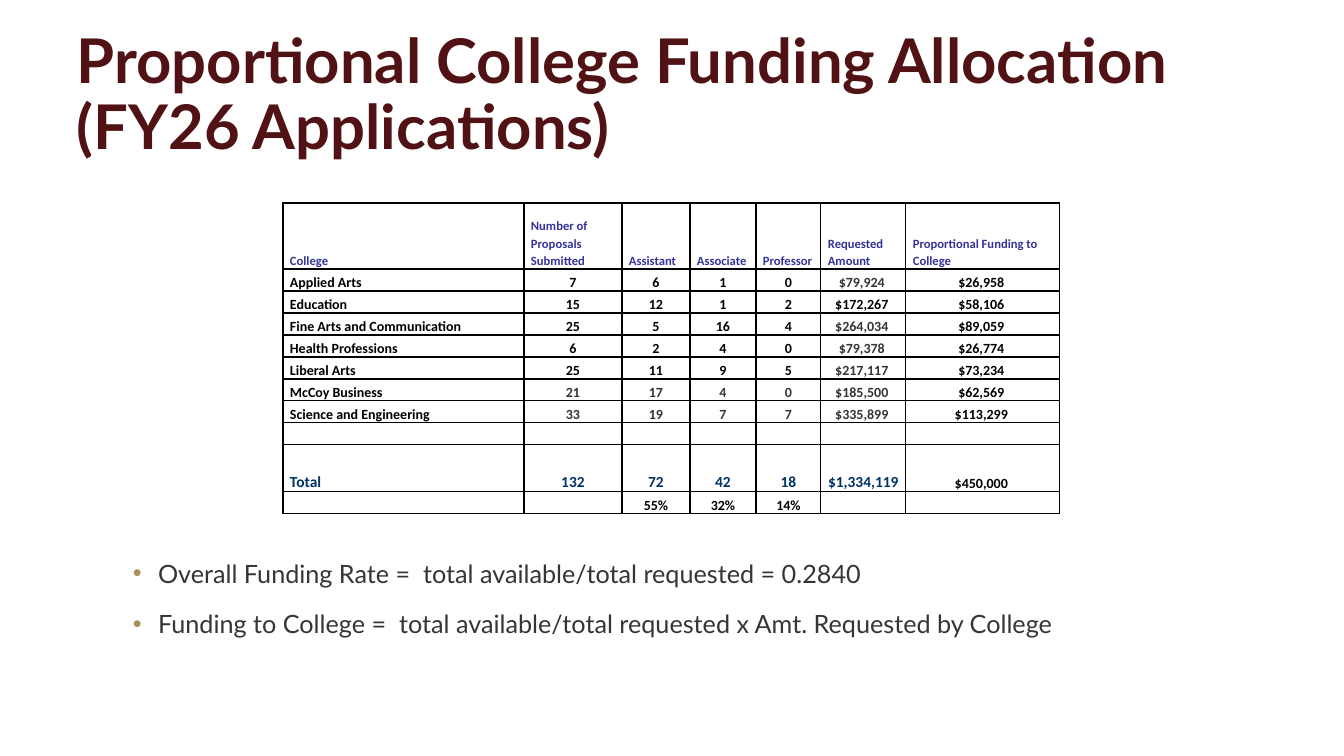
from dataclasses import dataclass
from typing import Any

import pptx
import pptx.dml.color
import pptx.enum.text
import pptx.oxml
import pptx.oxml.ns
import pptx.util
from lxml import etree

PX = 12192000 / 1344
ALIGN = pptx.enum.text.PP_ALIGN
ANCHOR = pptx.enum.text.MSO_ANCHOR


@dataclass(frozen=True)
class Theme:
    maroon: str = "501214"
    gold: str = "AC9155"
    gray: str = "363434"
    black: str = "000000"
    indigo: str = "333399"
    navy: str = "003366"
    heading_font: str = "Lato"
    table_font: str = "Calibri"
    title_size: int = 44
    body_size: int = 18
    header_size: int = 9
    cell_size: int = 10
    total_size: int = 11


THEME = Theme()


@dataclass(frozen=True)
class Box:
    left: int
    top: int
    width: int
    height: int


@dataclass(frozen=True)
class College:
    name: str
    proposals: int
    ranks: tuple[int, int, int]
    requested: int
    funding: int
    count_color: str = THEME.black
    requested_color: str = THEME.gray


@dataclass(frozen=True)
class CellText:
    text: str = ""
    color: str = THEME.black
    size: int = THEME.cell_size
    centered: bool = True


TITLE = "Proportional College Funding Allocation (FY26 Applications)"
TITLE_BOX = Box(67, 22, 1210, 146)
FORMULAS = [
    "Overall Funding Rate =  total available/total requested = 0.2840",
    "Funding to College =  total available/total requested x Amt. Requested by College",
]
FORMULA_BOX = Box(123, 547, 1123, 209)

HEADERS = ["College", "Number of Proposals Submitted", "Assistant", "Associate",
           "Professor", "Requested Amount", "Proportional Funding to College"]
COLLEGES = [
    College("Applied Arts", 7, (6, 1, 0), 79924, 26958),
    College("Education", 15, (12, 1, 2), 172267, 58106, requested_color=THEME.black),
    College("Fine Arts and Communication", 25, (5, 16, 4), 264034, 89059),
    College("Health Professions", 6, (2, 4, 0), 79378, 26774),
    College("Liberal Arts", 25, (11, 9, 5), 217117, 73234),
    College("McCoy Business", 21, (17, 4, 0), 185500, 62569, THEME.gray),
    College("Science and Engineering", 33, (19, 7, 7), 335899, 113299, THEME.gray),
]
TOTAL = College("Total", 132, (72, 42, 18), 1334119, 450000)
RANK_SHARES = ["55%", "32%", "14%"]

TABLE_LEFT, TABLE_TOP = 283, 203
COLUMN_WIDTHS = [241, 98, 68, 66, 65, 85, 154]
ROW_HEIGHTS = [66] + [22] * (len(COLLEGES) + 1) + [47, 22]
CELL_INSET = 7


def px(n: int) -> int:
    return pptx.util.Emu(round(n * PX))


def apply(target: Any, values: dict[str, Any]) -> None:
    for name, value in values.items():
        setattr(target, name, value)


def add_run(p: Any, text: str, font: str, size: int, color: str, bold: bool) -> None:
    r = p.add_run()
    r.text = text
    apply(r.font, {"name": font, "size": pptx.util.Pt(size), "bold": bold})
    r.font.color.rgb = pptx.dml.color.RGBColor.from_string(color)


def add_text_frame(s: Any, box: Box, anchor: Any) -> Any:
    sp = s.shapes.add_textbox(px(box.left), px(box.top), px(box.width), px(box.height))
    apply(sp.text_frame, {"word_wrap": True, "vertical_anchor": anchor})
    return sp.text_frame


def add_bullet(p: Any) -> None:
    pPr = p._p.get_or_add_pPr()
    indent = pptx.util.Inches(0.25)
    pPr.set("marL", str(indent))
    pPr.set("indent", str(-indent))
    ns = pptx.oxml.ns.nsdecls("a")
    for xml in (f'<a:buClr {ns}><a:srgbClr val="{THEME.gold}"/></a:buClr>',
                f'<a:buFont {ns} typeface="Arial"/>',
                f'<a:buChar {ns} char="•"/>'):
        pPr.append(pptx.oxml.parse_xml(xml))


def add_title(s: Any) -> None:
    p = add_text_frame(s, TITLE_BOX, ANCHOR.BOTTOM).paragraphs[0]
    p.line_spacing = 0.9
    add_run(p, TITLE, THEME.heading_font, THEME.title_size, THEME.maroon, True)


def add_formulas(s: Any) -> None:
    tf = add_text_frame(s, FORMULA_BOX, ANCHOR.TOP)
    for i, text in enumerate(FORMULAS):
        p = tf.add_paragraph() if i else tf.paragraphs[0]
        add_bullet(p)
        p.line_spacing = 1.2
        if i:
            p.space_before = pptx.util.Pt(10)
        add_run(p, text, THEME.heading_font, THEME.body_size, THEME.gray, False)


def college_row(c: College) -> list[CellText]:
    counts = [CellText(str(n), c.count_color) for n in (c.proposals, *c.ranks)]
    return [CellText(c.name, centered=False), *counts,
            CellText(f"${c.requested:,} ", c.requested_color),
            CellText(f"${c.funding:,} ")]


def total_row() -> list[CellText]:
    *cells, funding = college_row(TOTAL)
    return [CellText(c.text, THEME.navy, THEME.total_size, c.centered)
            for c in cells] + [funding]


def table_rows() -> list[list[CellText]]:
    header = [CellText(h, THEME.indigo, THEME.header_size, False) for h in HEADERS]
    blank = CellText()
    shares = [blank] * 2 + [CellText(share) for share in RANK_SHARES] + [blank] * 2
    return [header, *map(college_row, COLLEGES), [blank] * len(HEADERS),
            total_row(), shares]


def set_borders(cell: Any) -> None:
    tcPr = cell._tc.get_or_add_tcPr()
    ns = pptx.oxml.ns.nsdecls("a")
    for i, side in enumerate("LRTB"):
        tcPr.insert(i, pptx.oxml.parse_xml(
            f'<a:ln{side} {ns} w="12700"><a:solidFill><a:srgbClr val="{THEME.black}"/>'
            f'</a:solidFill></a:ln{side}>'))


def fill_cell(cell: Any, content: CellText) -> None:
    apply(cell, {"margin_left": px(CELL_INSET), "margin_right": px(CELL_INSET),
                 "margin_top": 0, "margin_bottom": 0,
                 "vertical_anchor": ANCHOR.BOTTOM})
    cell.fill.background()
    set_borders(cell)
    p = cell.text_frame.paragraphs[0]
    if not content.text:
        end = etree.SubElement(p._p, pptx.oxml.ns.qn("a:endParaRPr"))
        end.set("sz", str(content.size * 100))
        return
    apply(p, {"alignment": ALIGN.CENTER if content.centered else ALIGN.LEFT,
              "line_spacing": 1.15, "space_after": pptx.util.Pt(8)})
    add_run(p, content.text, THEME.table_font, content.size, content.color, True)


def add_funding_table(s: Any) -> None:
    table = s.shapes.add_table(len(ROW_HEIGHTS), len(COLUMN_WIDTHS), px(TABLE_LEFT),
                               px(TABLE_TOP), px(sum(COLUMN_WIDTHS)),
                               px(sum(ROW_HEIGHTS))).table
    apply(table, {"first_row": False, "horz_banding": False})
    for column, width in zip(table.columns, COLUMN_WIDTHS):
        column.width = px(width)
    for row, height, contents in zip(table.rows, ROW_HEIGHTS, table_rows()):
        row.height = px(height)
        for cell, content in zip(row.cells, contents):
            fill_cell(cell, content)


def main() -> None:
    prs = pptx.Presentation()
    apply(prs, {"slide_width": px(1344), "slide_height": px(756)})
    s = prs.slides.add_slide(prs.slide_layouts[6])
    add_title(s)
    add_formulas(s)
    add_funding_table(s)
    prs.save("out.pptx")


if __name__ == "__main__":
    main()
